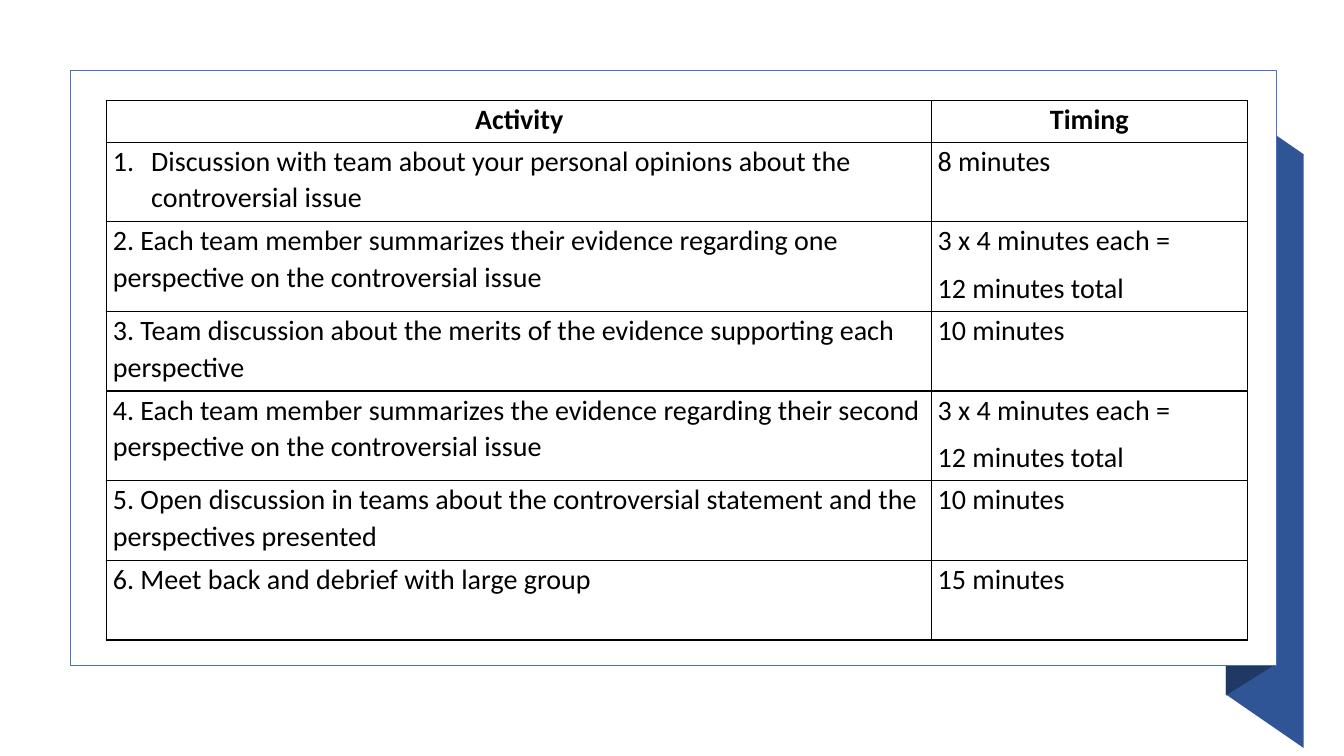
"""Build a slide with a timed activity plan on a folded-ribbon panel."""
import dataclasses
import typing

import lxml.etree
import pptx
import pptx.dml.color
import pptx.enum.shapes
import pptx.enum.text
import pptx.oxml.ns
import pptx.util

PX = 9144


@dataclasses.dataclass(frozen=True)
class Theme:
    """Colours, font and type sizes of the slide."""
    ink: str = "000000"
    paper: str = "FFFFFF"
    outline: str = "4472C4"
    ribbon: str = "2F5597"
    fold: str = "203864"
    font: str = "Calibri"
    size: int = 20
    space_after: int = 8
    line_spacing: float = 1.07


class Ribbon(typing.NamedTuple):
    """A filled polygon given by its corners in px."""
    points: tuple[tuple[int, int], ...]
    color: str


class Activity(typing.NamedTuple):
    """One table row: its texts, height in px and format."""
    name: str
    timing: str
    height: int = 79
    header: bool = False
    numbered: bool = False


THEME = Theme()
RIBBONS = (
    Ribbon(((1293, 742), (1216, 689), (1216, 100), (1293, 153)), THEME.ribbon),
    Ribbon(((1262, 661), (1216, 690), (1216, 100), (1262, 70)), THEME.fold),
)
COLUMNS = (818, 313)
TEAM_TURNS = "3 x 4 minutes each =\n12 minutes total"
ACTIVITIES = (
    Activity("Activity", "Timing", height=41, header=True),
    Activity("Discussion with team about your personal opinions about the controversial issue",
             "8 minutes", numbered=True),
    Activity("2. Each team member summarizes their evidence regarding one perspective "
             "on the controversial issue", TEAM_TURNS, height=89),
    Activity("3. Team discussion about the merits of the evidence supporting each perspective",
             "10 minutes"),
    Activity("4. Each team member summarizes the evidence regarding their second perspective "
             "on the controversial issue", TEAM_TURNS, height=89),
    Activity("5. Open discussion in teams about the controversial statement and the "
             "perspectives presented", "10 minutes"),
    Activity("6. Meet back and debrief with large group", "15 minutes"),
)


def px(length: int) -> pptx.util.Emu:
    """Turn a length in px into EMU."""
    return pptx.util.Emu(length * PX)


def rgb(color: str) -> pptx.dml.color.RGBColor:
    """Turn a hex string into a colour."""
    return pptx.dml.color.RGBColor.from_string(color)


def write_text(text_frame, text: str, *, bold: bool = False, centered: bool = False,
               numbered: bool = False) -> None:
    """Write one paragraph for each line of the text."""
    text_frame.text = text
    for paragraph in text_frame.paragraphs:
        paragraph.line_spacing = THEME.line_spacing
        paragraph.space_after = pptx.util.Pt(THEME.space_after)
        if centered:
            paragraph.alignment = pptx.enum.text.PP_ALIGN.CENTER
        if numbered:
            properties = paragraph._p.get_or_add_pPr()
            properties.set("marL", str(px(38)))
            properties.set("indent", str(-px(38)))
            lxml.etree.SubElement(properties, pptx.oxml.ns.qn("a:buAutoNum"), type="arabicPeriod")
        for run in paragraph.runs:
            run.font.name = THEME.font
            run.font.size = pptx.util.Pt(THEME.size)
            run.font.bold = bold
            run.font.color.rgb = rgb(THEME.ink)


def format_cell(cell) -> None:
    """Give a cell its margins, thin borders and no fill."""
    cell.margin_left = cell.margin_right = px(6)
    cell.margin_top = cell.margin_bottom = 0
    properties = cell._tc.get_or_add_tcPr()
    for side in ("lnL", "lnR", "lnT", "lnB"):
        border = lxml.etree.SubElement(properties, pptx.oxml.ns.qn(f"a:{side}"),
                                       w=str(pptx.util.Pt(1)))
        fill = lxml.etree.SubElement(border, pptx.oxml.ns.qn("a:solidFill"))
        lxml.etree.SubElement(fill, pptx.oxml.ns.qn("a:srgbClr"), val=THEME.ink)
    cell.fill.background()


def draw_ribbon(slide, ribbon: Ribbon) -> None:
    """Draw one face of the ribbon."""
    start, *corners = ribbon.points
    builder = slide.shapes.build_freeform(*start, scale=PX)
    builder.add_line_segments(corners, close=True)
    shape = builder.convert_to_shape()
    shape.shadow.inherit = False
    shape.fill.solid()
    shape.fill.fore_color.rgb = rgb(ribbon.color)
    shape.line.fill.background()


def draw_panel(slide) -> None:
    """Draw the outlined panel behind the table."""
    shape = slide.shapes.add_shape(pptx.enum.shapes.MSO_SHAPE.RECTANGLE,
                                   px(70), px(70), px(1196), px(590))
    shape.shadow.inherit = False
    shape.fill.solid()
    shape.fill.fore_color.rgb = rgb(THEME.paper)
    shape.line.color.rgb = rgb(THEME.outline)
    shape.line.width = pptx.util.Pt(1)


def draw_table(slide) -> None:
    """Draw the table of activities and timings."""
    height = sum(activity.height for activity in ACTIVITIES)
    table = slide.shapes.add_table(len(ACTIVITIES), len(COLUMNS), px(106), px(100),
                                   px(sum(COLUMNS)), px(height)).table
    table.first_row = table.horz_banding = False
    for column, width in zip(table.columns, COLUMNS):
        column.width = px(width)
    for row, activity in zip(table.rows, ACTIVITIES):
        row.height = px(activity.height)
        name_cell, timing_cell = row.cells
        write_text(name_cell.text_frame, activity.name, bold=activity.header,
                   centered=activity.header, numbered=activity.numbered)
        write_text(timing_cell.text_frame, activity.timing, bold=activity.header,
                   centered=activity.header)
        for cell in (name_cell, timing_cell):
            format_cell(cell)


def main() -> None:
    """Build and save the presentation."""
    presentation = pptx.Presentation()
    presentation.slide_width = px(1333)
    presentation.slide_height = px(750)
    slide = presentation.slides.add_slide(presentation.slide_layouts[6])
    for ribbon in RIBBONS:
        draw_ribbon(slide, ribbon)
    draw_panel(slide)
    draw_table(slide)
    presentation.save("out.pptx")


if __name__ == "__main__":
    main()
